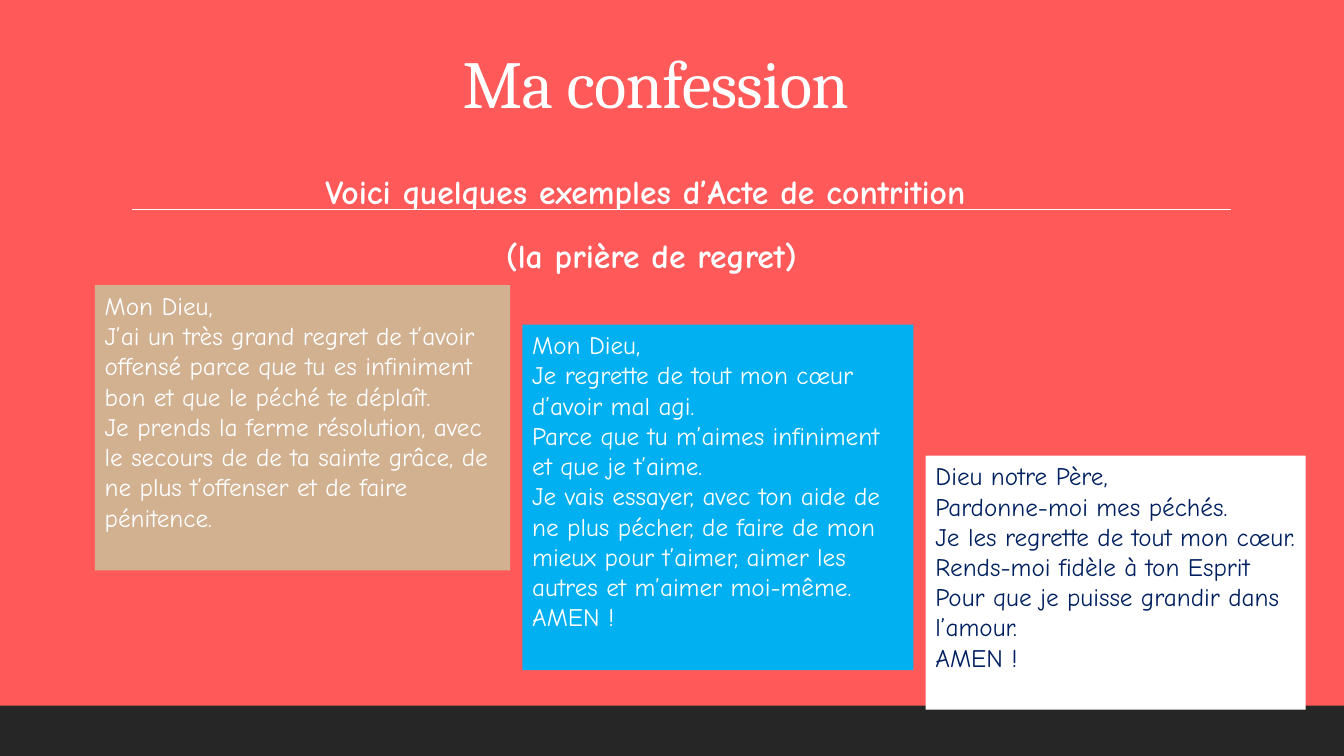
"""Build the "Ma confession" slide with three acts of contrition."""
from pptx import Presentation
from pptx.dml.color import RGBColor
from pptx.enum import shapes, text
from pptx.oxml import ns
from pptx.util import Inches, Pt
from lxml import etree

CORAL = RGBColor(0xFF, 0x59, 0x59)
CHARCOAL = RGBColor(0x26, 0x26, 0x26)
WHITE = RGBColor(0xFF, 0xFF, 0xFF)
SAND = RGBColor(0xD2, 0xB1, 0x91)
SKY = RGBColor(0x00, 0xB0, 0xF0)
NAVY = RGBColor(0x00, 0x20, 0x60)


def add_text(s, box, lines, color, para=None, **font):
    sp = s.shapes.add_textbox(*map(Inches, box))
    tf = sp.text_frame
    tf.word_wrap = True
    tf.text = "\n".join(lines)
    for p in tf.paragraphs:
        for name, value in (para or {}).items():
            setattr(p, name, value)
        r = p.runs[0]
        r.font.color.rgb = color
        for name, value in font.items():
            setattr(r.font, name, value)
    return sp


prs = Presentation()
prs.slide_width, prs.slide_height = Inches(13.33), Inches(7.5)
s = prs.slides.add_slide(prs.slide_layouts[6])
s.background.fill.solid()
s.background.fill.fore_color.rgb = CORAL

footer = s.shapes.add_shape(shapes.MSO_SHAPE.RECTANGLE, Inches(0), Inches(7),
                            prs.slide_width, Inches(0.5))
footer.shadow.inherit = False
footer.fill.solid()
footer.fill.fore_color.rgb = CHARCOAL
footer.line.fill.background()

rule = s.shapes.add_connector(shapes.MSO_CONNECTOR.STRAIGHT, Inches(1.31), Inches(2.08),
                              Inches(12.21), Inches(2.08))
rule.line.color.rgb = WHITE
rule.line.width = Pt(1)
etree.SubElement(rule.element.spPr, ns.qn("a:effectLst"))

CENTER = text.PP_ALIGN.CENTER
title = add_text(s, (1.83, 0.2, 9.35, 1.07), ["Ma confession"], WHITE,
                 {"alignment": CENTER, "line_spacing": 0.9}, name="Cambria", size=Pt(48))
title.text_frame.vertical_anchor = text.MSO_ANCHOR.BOTTOM
title.text_frame.paragraphs[0].runs[0].font._element.set("spc", "-50")

intro = add_text(s, (1.85, 1.61, 9.22, 1.22),
                 ["Voici quelques exemples d’Acte de contrition ", "(la prière de regret)"], WHITE,
                 {"alignment": CENTER, "line_spacing": 1.1,
                  "space_before": Pt(12), "space_after": Pt(2)},
                 name="Comic Neue", size=Pt(24), bold=True)
intro.text_frame.margin_left = intro.text_frame.margin_right = Inches(0)

prayers = [
    ((5.18, 3.22, 3.88, 3.43), SKY, WHITE, [
        "Mon Dieu,",
        "Je regrette de tout mon cœur d’avoir mal agi.",
        "Parce que tu m’aimes infiniment et que je t’aime.",
        "Je vais essayer, avec ton aide de ne plus pécher, de faire de mon mieux "
        "pour t’aimer, aimer les autres et m’aimer moi-même.",
        "AMEN !"]),
    ((0.94, 2.83, 4.12, 2.83), SAND, WHITE, [
        "Mon Dieu,",
        "J’ai un très grand regret de t’avoir offensé parce que tu es infiniment bon "
        "et que le péché te déplaît.",
        "Je prends la ferme résolution, avec le secours de de ta sainte grâce, "
        "de ne plus t’offenser et de faire pénitence."]),
    ((9.18, 4.52, 3.77, 2.52), WHITE, NAVY, [
        "Dieu notre Père,",
        "Pardonne-moi mes péchés.",
        "Je les regrette de tout mon cœur.",
        "Rends-moi fidèle à ton Esprit",
        "Pour que je puisse grandir dans l’amour.",
        "AMEN !"]),
]
for box, fill, color, lines in prayers:
    sp = add_text(s, box, lines, color, name="Comic Neue", size=Pt(18))
    sp.fill.solid()
    sp.fill.fore_color.rgb = fill

prs.save("out.pptx")
